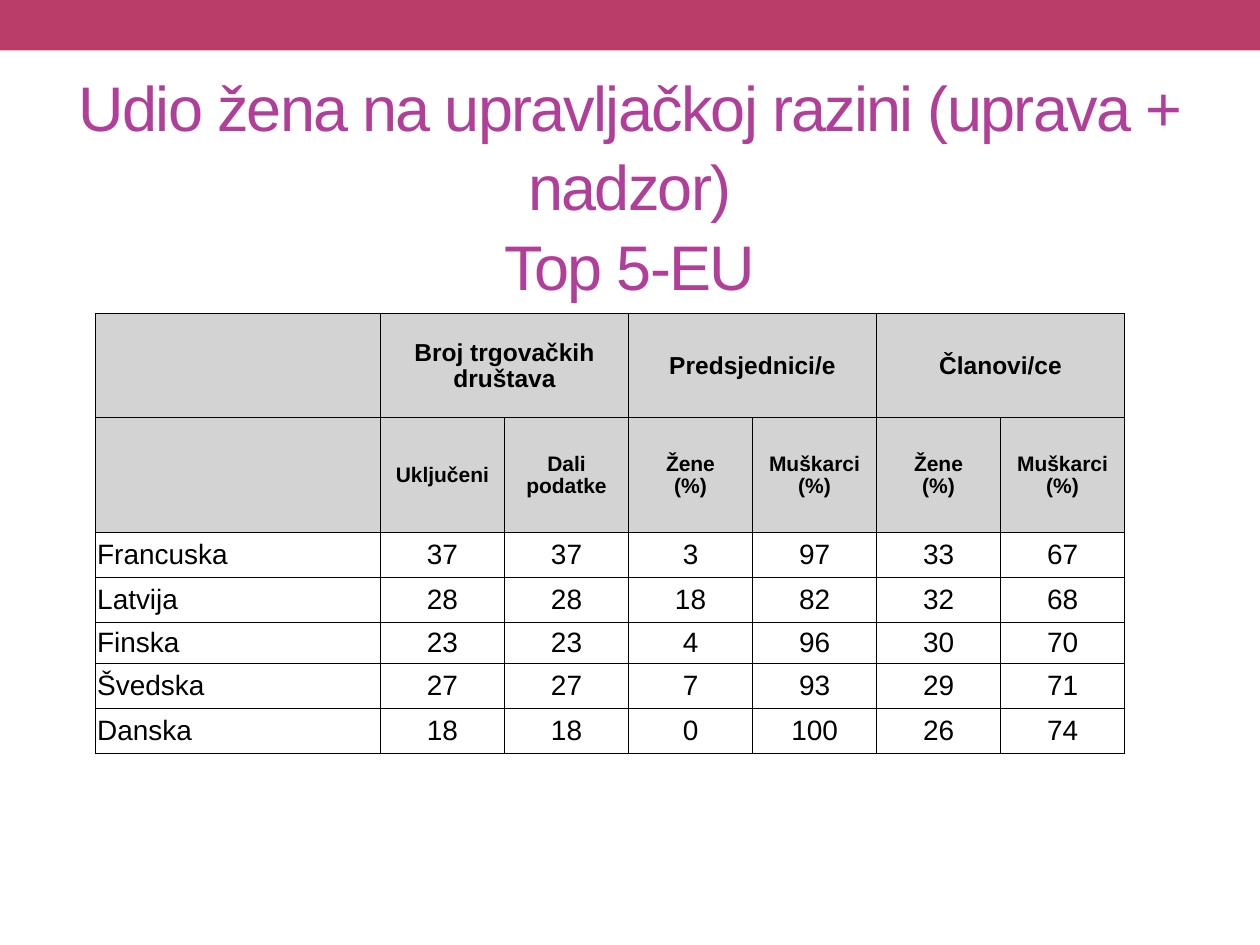
from lxml import etree
from pptx import Presentation
from pptx.dml.color import RGBColor
from pptx.enum.shapes import MSO_SHAPE
from pptx.enum.text import MSO_ANCHOR, PP_ALIGN
from pptx.oxml.ns import qn
from pptx.util import Cm, Pt

RECT = MSO_SHAPE.RECTANGLE
MIDDLE = MSO_ANCHOR.MIDDLE
LEFT, CENTER = PP_ALIGN.LEFT, PP_ALIGN.CENTER
ROSE = RGBColor(0xB8, 0x3D, 0x68)
PURPLE = RGBColor(0xB1, 0x3F, 0x9A)
GRAY = RGBColor(0xD3, 0xD3, 0xD3)
BLACK = RGBColor(0, 0, 0)

GROUPS = ["", "Broj trgovačkih društava", "", "Predsjednici/e", "", "Članovi/ce", ""]
SHARES = ["Žene\n(%)", "Muškarci\n(%)"]
HEADS = ["", "Uključeni", "Dali podatke"] + SHARES * 2
DATA = [
    ("Francuska", 37, 37, 3, 97, 33, 67),
    ("Latvija", 28, 28, 18, 82, 32, 68),
    ("Finska", 23, 23, 4, 96, 30, 70),
    ("Švedska", 27, 27, 7, 93, 29, 71),
    ("Danska", 18, 18, 0, 100, 26, 74),
]
WIDTHS = [5.74] + [2.5] * 6
HEIGHTS = [2.1, 2.31, 0.91, 0.91, 0.82, 0.91, 0.91]


class Deck:
    font = "Arial"

    def __init__(self, slide):
        self.slide = slide

    def label(self, frame, text, size, color, align=CENTER, bold=False, space=1.0, track=0):
        frame.text = text
        for para in frame.paragraphs:
            para.alignment = align
            para.line_spacing = space
            for run in para.runs:
                run.font.name = self.font
                run.font.size = Pt(size)
                run.font.bold = bold
                run.font.color.rgb = color
                if track:
                    run._r.get_or_add_rPr().set("spc", str(track))

    def band(self, x, y, w, h, color):
        shape = self.slide.shapes.add_shape(RECT, Cm(x), Cm(y), Cm(w), Cm(h))
        shape.shadow.inherit = False
        shape.fill.solid()
        shape.fill.fore_color.rgb = color
        shape.line.fill.background()

    def title(self, x, y, w, h, text):
        frame = self.slide.shapes.add_textbox(Cm(x), Cm(y), Cm(w), Cm(h)).text_frame
        frame.word_wrap = True
        frame.vertical_anchor = MIDDLE
        frame.margin_top = frame.margin_bottom = 0
        self.label(frame, text, 36, PURPLE, space=1.05, track=-100)

    def border(self, cell):
        props = cell._tc.get_or_add_tcPr()
        for side in ("a:lnL", "a:lnR", "a:lnT", "a:lnB"):
            line = etree.SubElement(props, qn(side), w=str(Pt(0.5)))
            fill = etree.SubElement(line, qn("a:solidFill"))
            etree.SubElement(fill, qn("a:srgbClr"), val=str(BLACK))

    def cell(self, cell, text, size, align, head):
        cell.vertical_anchor = MIDDLE
        cell.margin_left = cell.margin_right = cell.margin_top = Cm(0.03)
        cell.margin_bottom = 0
        self.border(cell)
        if head:
            cell.fill.solid()
            cell.fill.fore_color.rgb = GRAY
        else:
            cell.fill.background()
        if text:
            self.label(cell.text_frame, text, size, BLACK, align, head, 0.95)

    def table(self, x, y, widths, heights, rows):
        shape = self.slide.shapes.add_table(
            len(rows), len(widths), Cm(x), Cm(y), Cm(sum(widths)), Cm(sum(heights)))
        table = shape.table
        table.first_row = table.horz_banding = False
        for col, width in zip(table.columns, widths):
            col.width = Cm(width)
        for row, height in zip(table.rows, heights):
            row.height = Cm(height)
        for r, row in enumerate(rows):
            size = {0: 14, 1: 12}.get(r, 16)
            for c, value in enumerate(row):
                align = CENTER if c else LEFT
                self.cell(table.cell(r, c), str(value), size, align, r < 2)
        for c in range(1, len(widths), 2):
            table.cell(0, c).merge(table.cell(0, c + 1))


def main():
    show = Presentation()
    show.slide_width, show.slide_height = Cm(25.4), Cm(19.05)
    deck = Deck(show.slides.add_slide(show.slide_layouts[6]))
    deck.band(0, 0, 25.4, 1.02, ROSE)
    deck.title(1.27, 1.42, 22.86, 4.57,
               "Udio žena na upravljačkoj razini (uprava + nadzor)\nTop 5-EU")
    deck.table(1.93, 6.32, WIDTHS, HEIGHTS, [GROUPS, HEADS] + DATA)
    show.save("out.pptx")


if __name__ == "__main__":
    main()
